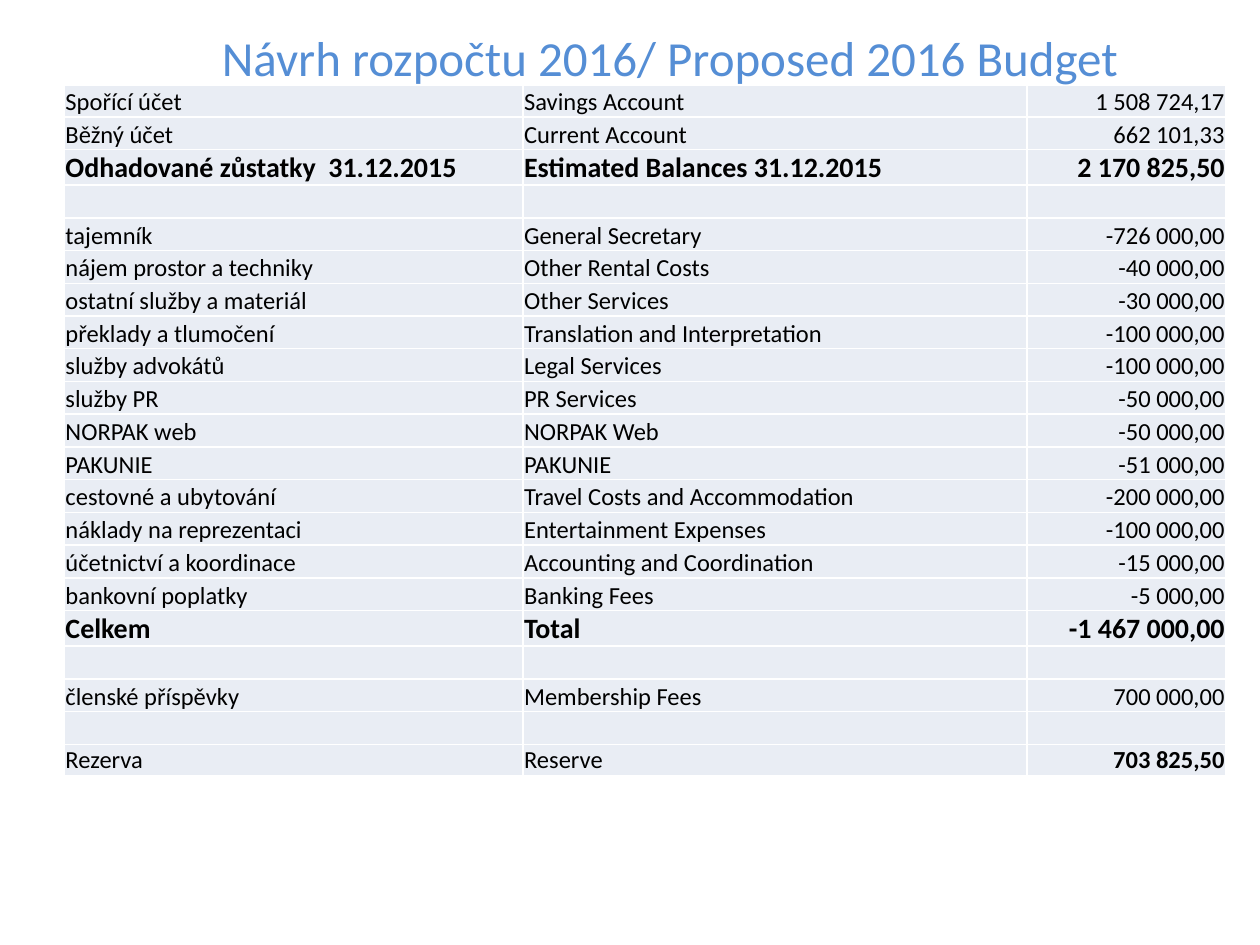
from lxml.etree import SubElement
from pptx import Presentation
from pptx.dml.color import RGBColor
from pptx.enum.text import MSO_ANCHOR, PP_ALIGN
from pptx.oxml.ns import qn
from pptx.util import Inches, Pt

COLORS = {"title": "558ED5", "text": "000000", "cell": "E9EDF4", "border": "FFFFFF"}
FONT = "Calibri"
COLUMN_WIDTHS = (3.64, 4, 1.58)
ROW_HEIGHT, EDGE_HEIGHT, TOTAL_HEIGHT = 0.26, 0.24, 0.28
BLANK = ("", "", "")
BUDGET = [
    ("Spořící účet", "Savings Account", "1 508 724,17"),
    ("Běžný účet", "Current Account", "662 101,33"),
    ("Odhadované zůstatky  31.12.2015", "Estimated Balances 31.12.2015", "2 170 825,50"),
    BLANK,
    ("tajemník", "General Secretary", "-726 000,00"),
    ("nájem prostor a techniky", "Other Rental Costs", "-40 000,00"),
    ("ostatní služby a materiál", "Other Services", "-30 000,00"),
    ("překlady a tlumočení", "Translation and Interpretation", "-100 000,00"),
    ("služby advokátů", "Legal Services", "-100 000,00"),
    ("služby PR", "PR Services", "-50 000,00"),
    ("NORPAK web", "NORPAK Web", "-50 000,00"),
    ("PAKUNIE", "PAKUNIE", "-51 000,00"),
    ("cestovné a ubytování", "Travel Costs and Accommodation", "-200 000,00"),
    ("náklady na reprezentaci", "Entertainment Expenses", "-100 000,00"),
    ("účetnictví a koordinace", "Accounting and Coordination", "-15 000,00"),
    ("bankovní poplatky", "Banking Fees", "-5 000,00"),
    ("Celkem", "Total", "-1 467 000,00"),
    BLANK,
    ("členské příspěvky", "Membership Fees", "700 000,00"),
    BLANK,
    ("Rezerva", "Reserve", "703 825,50"),
]
TOTALS = ("Celkem", "Odhadované zůstatky  31.12.2015")


def color(name):
    return RGBColor.from_string(COLORS[name])


def set_font(paragraph, size, color_name, bold=False):
    font = paragraph.font
    font.name, font.size, font.bold = FONT, Pt(size), bold
    font.color.rgb = color(color_name)


def add_borders(cell):
    properties = cell._tc.get_or_add_tcPr()
    for index, side in enumerate(("a:lnL", "a:lnR", "a:lnT", "a:lnB")):
        line = properties.makeelement(qn(side), {"w": str(Pt(1))})
        fill = SubElement(line, qn("a:solidFill"))
        SubElement(fill, qn("a:srgbClr"), val=COLORS["border"])
        properties.insert(index, line)  # borders come before the fill


def format_cell(cell, text, size, bold, alignment):
    cell.fill.solid()
    cell.fill.fore_color.rgb = color("cell")
    add_borders(cell)
    cell.margin_left = cell.margin_right = cell.margin_top = Inches(0.01)
    cell.margin_bottom = 0
    cell.vertical_anchor = MSO_ANCHOR.BOTTOM
    cell.text = text
    paragraph = cell.text_frame.paragraphs[0]
    paragraph.alignment = alignment
    set_font(paragraph, size, "text", bold)
    if not text:  # an empty line takes its height from the end mark
        SubElement(paragraph._p, qn("a:endParaRPr"), sz=str(size * 100))


def row_height(index, is_total):
    if is_total:
        return TOTAL_HEIGHT
    return EDGE_HEIGHT if index in (0, len(BUDGET) - 1) else ROW_HEIGHT


def add_budget_table(slide):
    table = slide.shapes.add_table(
        len(BUDGET), len(COLUMN_WIDTHS),
        Inches(0.51), Inches(0.68), Inches(sum(COLUMN_WIDTHS)), Inches(5.43),
    ).table
    table.first_row = table.horz_banding = False
    for column, width in zip(table.columns, COLUMN_WIDTHS):
        column.width = Inches(width)
    for row_index, entries in enumerate(BUDGET):
        is_total = entries[0] in TOTALS
        table.rows[row_index].height = Inches(row_height(row_index, is_total))
        for column_index, text in enumerate(entries):
            is_amount = column_index == 2
            is_reserve = is_amount and row_index == len(BUDGET) - 1
            format_cell(
                table.cell(row_index, column_index), text,
                16 if is_total else 14, is_total or is_reserve,
                PP_ALIGN.RIGHT if is_amount else PP_ALIGN.LEFT,
            )


def format_title(slide):
    title = slide.shapes.title
    title.left, title.top = Inches(1.22), Inches(0.3)
    title.width, title.height = Inches(8.28), Inches(0.3)
    title.text_frame.text = "Návrh rozpočtu 2016/ Proposed 2016 Budget "
    title.text_frame.vertical_anchor = MSO_ANCHOR.MIDDLE
    paragraph = title.text_frame.paragraphs[0]
    paragraph.alignment = PP_ALIGN.CENTER
    set_font(paragraph, 28, "title")
    slide.shapes._spTree.append(title._element)  # title in front of the table


def main():
    presentation = Presentation()
    presentation.slide_width, presentation.slide_height = Inches(10), Inches(7.5)
    slide = presentation.slides.add_slide(presentation.slide_layouts[5])
    add_budget_table(slide)
    format_title(slide)
    presentation.save("out.pptx")


if __name__ == "__main__":
    main()
